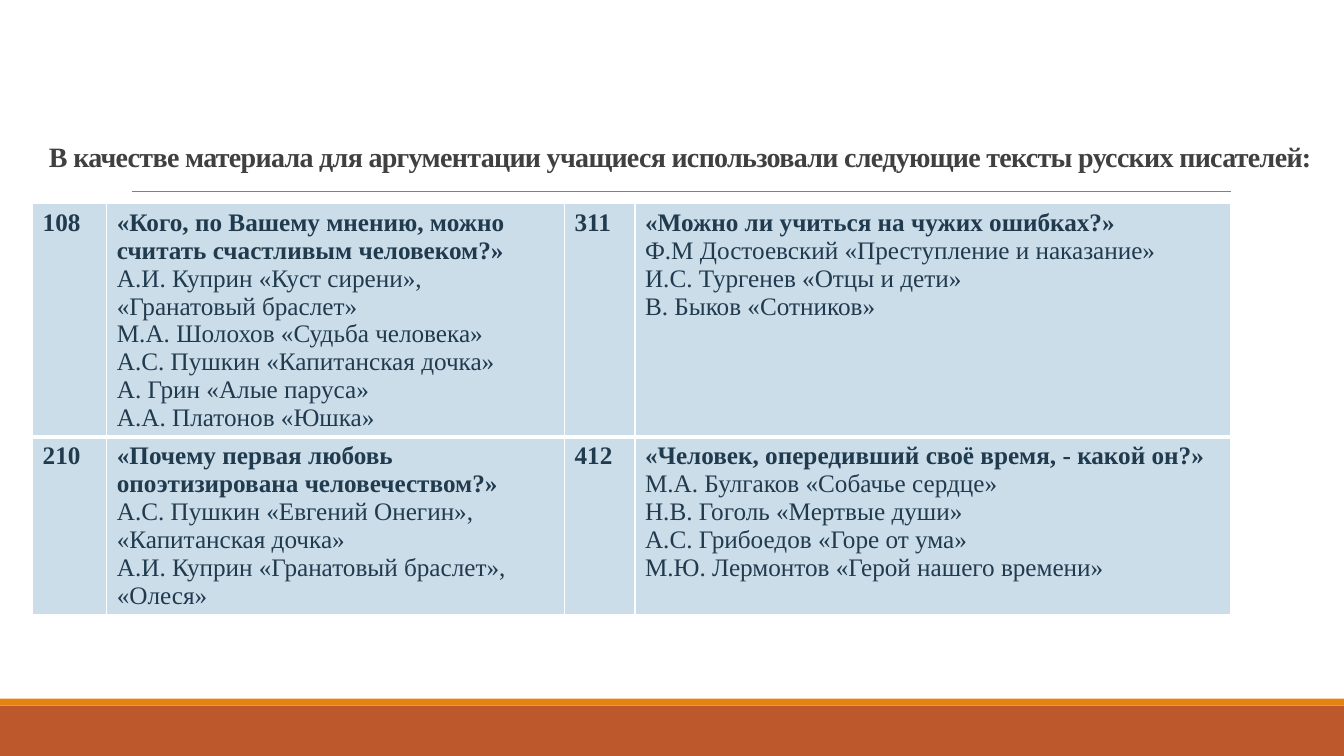
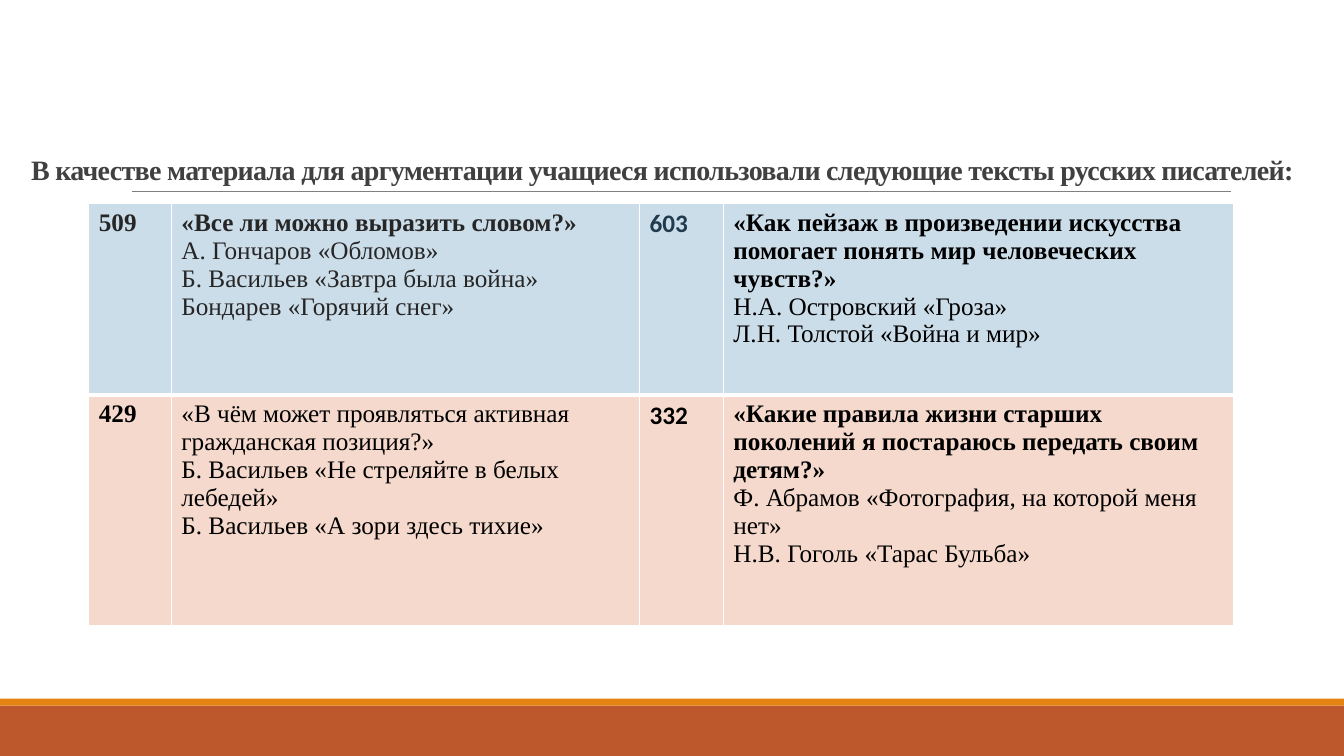
from dataclasses import dataclass
from typing import NamedTuple

import pptx
import pptx.dml.color
import pptx.enum.shapes
import pptx.enum.text
import pptx.oxml
import pptx.oxml.ns
import pptx.presentation
import pptx.slide
import pptx.table
import pptx.text.text
import pptx.util
from lxml import etree

Pt = pptx.util.Pt
RGB = pptx.dml.color.RGBColor
qn = pptx.oxml.ns.qn


@dataclass(frozen=True)
class Theme:
    rust: RGB = RGB(0xBD, 0x58, 0x2C)
    amber: RGB = RGB(0xE4, 0x83, 0x12)
    rule: RGB = RGB(0x80, 0x80, 0x80)
    title: RGB = RGB(0x40, 0x40, 0x40)
    navy: RGB = RGB(0x20, 0x3A, 0x4E)
    coal: RGB = RGB(0x26, 0x26, 0x26)
    black: RGB = RGB(0, 0, 0)
    white: RGB = RGB(0xFF, 0xFF, 0xFF)
    blue: RGB = RGB(0xCC, 0xDD, 0xEA)
    peach: RGB = RGB(0xF5, 0xD9, 0xCC)
    serif: str = "Times New Roman"
    sans: str = "Calibri"
    head: float = 20
    body: float = 18


THEME = Theme()
WIDTH, HEIGHT = 960, 540
TITLE = ("В качестве материала для аргументации учащиеся использовали "
         "следующие тексты русских писателей:")


class Box(NamedTuple):
    left: float
    top: float
    width: float
    height: float


class Band(NamedTuple):
    top: float
    height: float
    fill: RGB


class Topic(NamedTuple):
    code: str
    ask: str
    works: list[str]
    ink: RGB = THEME.navy
    tint: RGB = THEME.navy  # colour of the code
    face: str = THEME.serif  # font of the code
    bold: bool = True


class Page(NamedTuple):
    title: Box
    inset: tuple[float, float]  # left, bottom
    left: float
    cols: list[float]
    rows: list[float]
    fills: list[RGB]
    grid: list[list[Topic]]


BANDS = [Band(504, 36, THEME.rust), Band(499, 5, THEME.amber)]

PAGES = [
    Page(
        Box(23, 46.8, 921.6, 104.4), (12, 27.4), 23.3,
        [53, 327, 50.3, 425.2], [166.5, 126.5], [THEME.blue, THEME.blue],
        [
            [
                Topic("108", "«Кого, по Вашему мнению, можно считать счастливым человеком?»", [
                    "А.И. Куприн «Куст сирени», «Гранатовый браслет»",
                    "М.А. Шолохов «Судьба человека»",
                    "А.С. Пушкин «Капитанская дочка»",
                    "А. Грин «Алые паруса»",
                    "А.А. Платонов «Юшка»",
                ]),
                Topic("311", "«Можно ли учиться на чужих ошибках?»", [
                    "Ф.М Достоевский «Преступление и наказание»",
                    "И.С. Тургенев «Отцы и дети»",
                    "В. Быков «Сотников»",
                ]),
            ],
            [
                Topic("210", "«Почему первая любовь опоэтизирована человечеством?»", [
                    "А.С. Пушкин «Евгений Онегин», «Капитанская дочка»",
                    "А.И. Куприн «Гранатовый браслет», «Олеся»",
                ]),
                Topic("412", "«Человек, опередивший своё время, - какой он?»", [
                    "М.А. Булгаков «Собачье сердце»",
                    "Н.В. Гоголь «Мертвые души»",
                    "А.С. Грибоедов «Горе от ума»",
                    "М.Ю. Лермонтов «Герой нашего времени»",
                ]),
            ],
        ],
    ),
    Page(
        Box(15, 22.3, 935.3, 114.5), (7.2, 3.6), 63.4,
        [59, 334.5, 59.8, 364.7], [136.8, 164.2], [THEME.blue, THEME.peach],
        [
            [
                Topic("509", "«Все ли можно выразить словом?»", [
                    "А. Гончаров «Обломов»",
                    "Б. Васильев «Завтра была война»",
                    "Бондарев «Горячий снег»",
                ], THEME.coal, THEME.coal),
                Topic("603", "«Как пейзаж в произведении искусства помогает понять "
                      "мир человеческих чувств?»", [
                          "Н.А. Островский «Гроза»",
                          "Л.Н. Толстой «Война и мир»",
                      ], THEME.black, THEME.navy, THEME.sans),
            ],
            [
                Topic("429", "«В чём может проявляться активная гражданская позиция?»", [
                    "Б. Васильев «Не стреляйте в белых лебедей»",
                    "Б. Васильев «А зори здесь тихие»",
                ], THEME.black, THEME.black, bold=False),
                Topic("332", "«Какие правила жизни старших поколений я постараюсь "
                      "передать своим детям?»", [
                          "Ф. Абрамов «Фотография, на которой меня нет»",
                          "Н.В. Гоголь «Тарас Бульба»",
                      ], THEME.black, THEME.black, THEME.sans),
            ],
        ],
    ),
]


def style(para: pptx.text.text._Paragraph, size: float, ink: RGB,
          bold: bool, face: str = THEME.serif) -> None:
    font = para.font
    font.name, font.size, font.bold = face, Pt(size), bold
    font.color.rgb = ink


def add_frame(slide: pptx.slide.Slide) -> None:
    """Draw the bottom bands and the rule under the title."""
    for band in BANDS:
        shape = slide.shapes.add_shape(
            pptx.enum.shapes.MSO_SHAPE.RECTANGLE,
            0, Pt(band.top), Pt(WIDTH), Pt(band.height))
        shape.shadow.inherit = False
        shape.fill.solid()
        shape.fill.fore_color.rgb = band.fill
        shape.line.fill.background()
    rule = slide.shapes.add_connector(
        pptx.enum.shapes.MSO_CONNECTOR.STRAIGHT,
        Pt(94.3), Pt(136.8), Pt(879), Pt(136.8))
    rule.line.color.rgb = THEME.rule
    rule.line.width = Pt(0.5)
    etree.SubElement(rule._element.spPr, qn("a:effectLst"))


def add_title(slide: pptx.slide.Slide, page: Page) -> None:
    title = slide.shapes.title
    title.left, title.top, title.width, title.height = map(Pt, page.title)
    frame = title.text_frame
    frame.text = TITLE
    frame.word_wrap = True
    frame.auto_size = pptx.enum.text.MSO_AUTO_SIZE.NONE
    frame.vertical_anchor = pptx.enum.text.MSO_ANCHOR.BOTTOM
    frame.margin_left, frame.margin_bottom = map(Pt, page.inset)
    frame.margin_right = 0
    para = frame.paragraphs[0]
    para.alignment = pptx.enum.text.PP_ALIGN.LEFT
    para.line_spacing = 0.85
    style(para, THEME.head, THEME.title, True)
    para.runs[0]._r.get_or_add_rPr().set("spc", "-50")


def paint(cell: pptx.table._Cell, fill: RGB, top: float, foot: float) -> None:
    """Fill a cell and give it white borders."""
    cell.fill.solid()
    cell.fill.fore_color.rgb = fill
    props = cell._tc.get_or_add_tcPr()
    sides = [("L", 1), ("R", 1), ("T", top), ("B", foot)]
    for spot, (side, width) in enumerate(sides):
        line = etree.Element(qn(f"a:ln{side}"), w=str(Pt(width)))
        solid = etree.SubElement(line, qn("a:solidFill"))
        etree.SubElement(solid, qn("a:srgbClr"), val=str(THEME.white))
        props.insert(spot, line)


def write(cell: pptx.table._Cell, topic: Topic) -> None:
    """Put the question and the works under it into a cell."""
    frame = cell.text_frame
    frame.text = "\n".join([topic.ask, *topic.works])
    for index, para in enumerate(frame.paragraphs):
        style(para, THEME.body, topic.ink, topic.bold and index == 0)


def add_grid(slide: pptx.slide.Slide, page: Page) -> None:
    table = slide.shapes.add_table(
        len(page.rows), len(page.cols), Pt(page.left), Pt(145.6),
        Pt(sum(page.cols)), Pt(sum(page.rows))).table
    table.first_row = table.horz_banding = False
    for col, width in zip(table.columns, page.cols):
        col.width = Pt(width)
    for row, height in zip(table.rows, page.rows):
        row.height = Pt(height)
    for r, (topics, fill) in enumerate(zip(page.grid, page.fills)):
        top, foot = (1, 3) if r == 0 else (3, 1)
        for c, topic in enumerate(topics):
            code, text = table.cell(r, 2 * c), table.cell(r, 2 * c + 1)
            for cell in (code, text):
                paint(cell, fill, top, foot)
            code.text_frame.text = topic.code
            style(code.text_frame.paragraphs[0], THEME.body,
                  topic.tint, True, topic.face)
            write(text, topic)


def add_page(deck: pptx.presentation.Presentation, page: Page) -> None:
    slide = deck.slides.add_slide(deck.slide_layouts.get_by_name("Title Only"))
    add_frame(slide)
    add_title(slide, page)
    add_grid(slide, page)


def main() -> None:
    deck = pptx.Presentation()
    deck.slide_width, deck.slide_height = Pt(WIDTH), Pt(HEIGHT)
    for page in PAGES:
        add_page(deck, page)
    deck.save("out.pptx")


if __name__ == "__main__":
    main()
